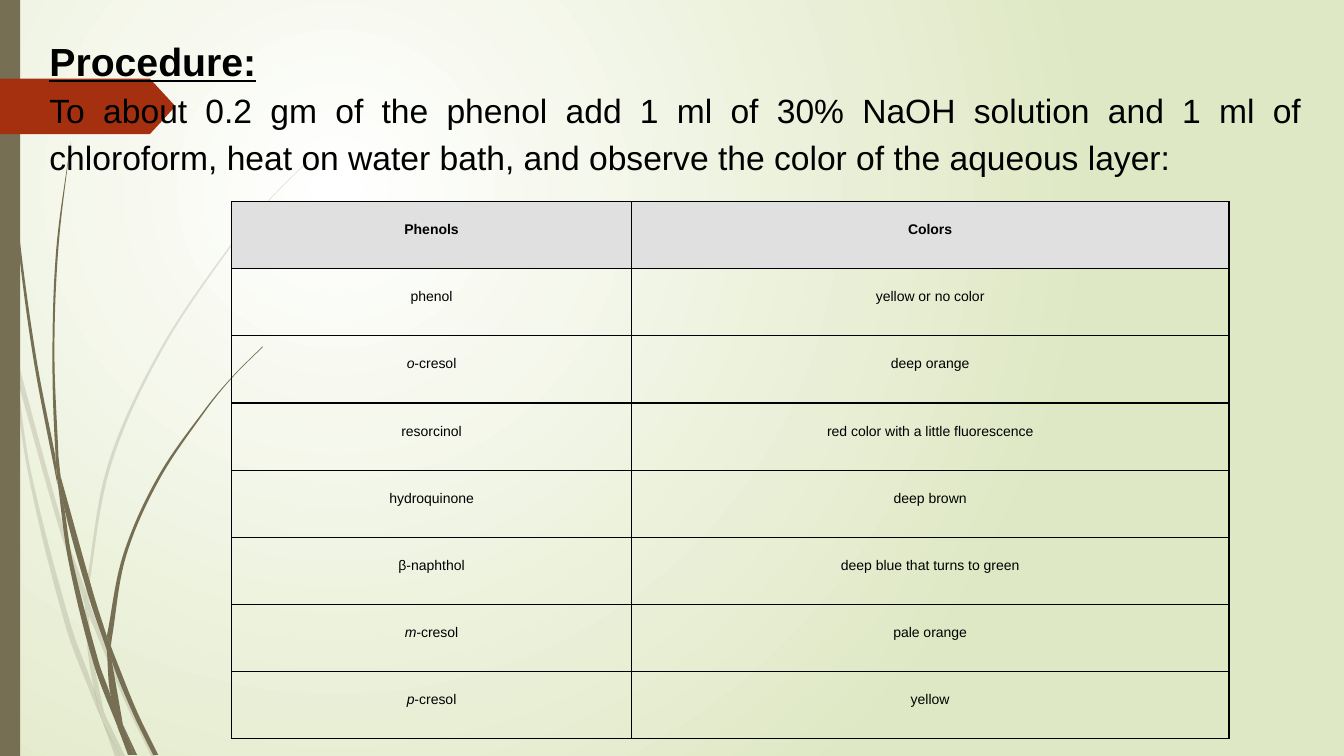
from dataclasses import dataclass
from math import hypot

from lxml.etree import SubElement
from pptx import Presentation
from pptx.dml.color import RGBColor
from pptx.enum.shapes import MSO_SHAPE
from pptx.enum.text import MSO_ANCHOR, MSO_AUTO_SIZE, PP_ALIGN
from pptx.oxml.ns import qn
from pptx.util import Inches, Pt


@dataclass(frozen=True)
class Theme:
    font: str = "Arial"
    ink: str = "000000"
    white: str = "FFFFFF"
    green: str = "DFE8C4"
    olive: str = "766F54"
    rust: str = "A53010"
    head: str = "E0E0E0"
    title: int = 28
    body: int = 24
    cell: int = 10
    line: float = 1.15


THEME = Theme()

# Each piece of grass has two curved edges, one down and one back up
PALE = [
    ([(0.11, 3.5), (0.09, 3.22), (0, 2.82)], [(0, 2.99), (0.1, 3.44)]),
    ([(0.17, 3.76), (0.58, 5.22), (0.84, 5.99)],
     [(0.85, 5.86), (0.62, 5.2), (0.14, 3.45)]),
    ([(0.88, 6.1), (1.23, 6.94), (1.5, 7.5)],
     [(1.55, 7.5), (1.27, 6.92), (0.92, 6.07), (0.88, 5.96)]),
    ([(1.05, 7.11), (1.19, 7.5)], [(1.24, 7.5)]),
    ([(0.11, 3.5), (0.28, 4.7), (0.65, 6.21), (0.92, 6.93), (1.01, 7.14)],
     [(0.99, 7.07), (0.93, 6.83), (0.7, 6.19), (0.31, 4.69), (0.17, 3.76)]),
    ([(0.84, 5.99), (0.87, 6.46), (0.93, 6.83), (0.96, 6.92), (1.05, 7.11)],
     [(1.03, 7.06), (0.91, 6.46), (0.88, 6.1)]),
    ([(3.12, 1.53), (2.68, 1.97), (2.28, 2.44), (1.58, 3.48), (1.07, 4.61),
      (0.85, 5.84)],
     [(0.88, 5.96), (0.88, 5.84), (1.1, 4.62), (1.6, 3.49), (2.29, 2.45),
      (2.68, 1.98), (3.12, 1.54)]),
    ([(1.01, 7.14), (1.14, 7.5)], [(1.19, 7.5)]),
    ([(0.85, 5.86), (0.84, 5.99), (0.88, 6.08)], [(0.88, 6.1), (0.88, 5.96)]),
    ([(0.93, 6.83), (1.01, 7.14), (1.19, 7.5)], [(1.05, 7.11), (0.96, 6.92)]),
]
DARK = [
    ([(0.03, 0), (0.07, 1.1), (0.17, 2.33), (0.33, 3.55), (0.57, 4.81)],
     [(0.55, 4.53), (0.36, 3.55), (0.19, 2.32), (0.08, 1.09), (0.04, 0)]),
    ([(0.6, 4.72), (0.64, 5.05), (0.88, 5.92), (1.06, 6.45)],
     [(1.06, 6.31), (0.93, 5.9), (0.6, 4.72)]),
    ([(1.1, 6.41), (1.11, 6.56), (1.32, 7.08), (1.52, 7.49)],
     [(1.57, 7.49), (1.36, 7.06), (1.13, 6.49)]),
    ([(0.57, 4.77), (0.68, 5.57), (0.93, 6.59), (1.17, 7.22)],
     [(1.16, 7.17), (1.1, 6.91), (0.98, 6.57), (0.72, 5.56), (0.64, 5.05)]),
    ([(0.7, 1.41), (0.56, 2.45), (0.52, 3.49), (0.55, 4.49), (0.6, 4.72)],
     [(0.58, 4.53), (0.54, 3.49), (0.58, 2.45), (0.7, 1.41)]),
    ([(1.22, 7.19), (1.33, 7.49)], [(1.36, 7.49)]),
    ([(0.55, 4.49), (0.57, 4.77), (0.64, 5.05)], [(0.6, 4.72)]),
    ([(2.6, 3.44), (2.31, 3.73), (2.04, 4.05), (1.56, 4.74), (1.22, 5.51),
      (1.06, 6.31)],
     [(1.1, 6.41), (1.11, 6.33), (1.25, 5.52), (1.58, 4.76), (2.05, 4.06),
      (2.31, 3.74), (2.61, 3.44)]),
    ([(1.17, 7.22), (1.27, 7.49)], [(1.31, 7.49)]),
    ([(1.06, 6.45), (1.1, 6.91), (1.22, 7.19)], [(1.11, 6.56), (1.09, 6.51)]),
    ([(1.06, 6.31), (1.06, 6.45), (1.11, 6.56)], [(1.1, 6.41)]),
    ([(1.1, 6.91), (1.17, 7.22), (1.3, 7.49)],
     [(1.33, 7.49), (1.22, 7.19), (1.16, 7.06)]),
]

# Each cell is a pair: italic prefix, plain text
ROWS = [
    (("", "Phenols"), ("", "Colors")),
    (("", "phenol"), ("", "yellow or no color")),
    (("o", "-cresol"), ("", "deep orange")),
    (("", "resorcinol"), ("", "red color with a little fluorescence")),
    (("", "hydroquinone"), ("", "deep brown")),
    (("", "β-naphthol"), ("", "deep blue that turns to green")),
    (("m-", "cresol"), ("", "pale orange")),
    (("p", "-cresol"), ("", "yellow")),
]


def paint(shape, color, alpha=100):
    shape.shadow.inherit = False
    shape.fill.solid()
    shape.fill.fore_color.rgb = RGBColor.from_string(color)
    shape.line.fill.background()
    if alpha < 100:
        tone = shape.element.spPr.find(".//" + qn("a:srgbClr"))
        SubElement(tone, qn("a:alpha"), val=str(alpha * 1000))


def style(run, size, bold=False, italic=False):
    font = run.font
    font.name, font.size = THEME.font, Pt(size)
    font.bold, font.italic = bold, italic
    font.color.rgb = RGBColor.from_string(THEME.ink)


def handles(edge):
    """Return the two Bezier control points of each step along an edge."""
    ends = [edge[0], *edge, edge[-1]]
    slopes = []
    for (x1, y1), (x2, y2) in zip(ends, ends[2:]):
        span = hypot(x2 - x1, y2 - y1) or 1
        slopes.append(((x2 - x1) / span, (y2 - y1) / span))
    pairs = []
    for (ax, ay), (bx, by), (ux, uy), (vx, vy) in zip(
            edge, edge[1:], slopes, slopes[1:]):
        reach = hypot(bx - ax, by - ay) / 3
        pairs.append(((ax + ux * reach, ay + uy * reach),
                      (bx - vx * reach, by - vy * reach)))
    return pairs


def add_blade(slide, down, back, alpha):
    points = [(Inches(x), Inches(y)) for x, y in down + back]
    pen = slide.shapes.build_freeform(*points[0])
    pen.add_line_segments(points[1:], close=True)
    shape = pen.convert_to_shape()
    # A straight step joins the two edges; the others become curves
    curves = [*handles(down), None, *handles(back)]
    for step, pair in zip(list(shape.element.iter(qn("a:lnTo"))), curves):
        if pair:
            step.tag = qn("a:cubicBezTo")
            for spot, (x, y) in enumerate(pair):
                knot = SubElement(step, qn("a:pt"),
                                  x=str(Inches(x) - shape.left),
                                  y=str(Inches(y) - shape.top))
                step.insert(spot, knot)
    paint(shape, THEME.olive, alpha)


def add_ground(slide):
    fill = slide.background.fill
    fill.gradient()
    stops = zip(fill.gradient_stops, (THEME.white, THEME.green), (0, 1))
    for stop, color, place in stops:
        stop.color.rgb = RGBColor.from_string(color)
        stop.position = place
    grad = slide.element.find(".//" + qn("a:gradFill"))
    grad.remove(grad.find(qn("a:lin")))
    ring = SubElement(grad, qn("a:path"), path="circle")
    SubElement(ring, qn("a:fillToRect"), l="50000", t="50000",
               r="100000", b="100000")


def add_decor(slide, height):
    for group, alpha in ((PALE, 20), (DARK, 100)):
        for down, back in group:
            add_blade(slide, down, back, alpha)
    bar = slide.shapes.add_shape(MSO_SHAPE.RECTANGLE, 0, 0, Inches(0.2), height)
    paint(bar, THEME.olive)
    arrow = slide.shapes.add_shape(MSO_SHAPE.PENTAGON, 0, Inches(0.78),
                                   Inches(1.74), Inches(0.55))
    arrow.adjustments[0] = 0.46
    paint(arrow, THEME.rust)


def add_intro(slide, *box):
    holder = slide.shapes.title
    slide.shapes.element.append(holder.element)  # bring to front
    holder.left, holder.top, holder.width, holder.height = map(Inches, box)
    frame = holder.text_frame
    frame.text = ("Procedure:\nTo about 0.2 gm of the phenol add 1 ml of 30% "
                  "NaOH solution and 1 ml of chloroform, heat on water bath, "
                  "and observe the color of the aqueous layer:")
    frame.word_wrap = True
    frame.auto_size = MSO_AUTO_SIZE.NONE
    frame.vertical_anchor = MSO_ANCHOR.TOP
    looks = ((THEME.title, True), (THEME.body, False))
    for para, (size, bold) in zip(frame.paragraphs, looks):
        para.alignment = PP_ALIGN.JUSTIFY
        para.line_spacing = THEME.line
        para.space_before = Pt(0)
        style(para.runs[0], size, bold)
        para.runs[0].font.underline = bold


def fill_cell(cell, parts, head):
    props = cell._tc.get_or_add_tcPr()
    for side in ("a:lnL", "a:lnR", "a:lnT", "a:lnB"):
        line = SubElement(props, qn(side), w=str(Pt(1)))
        SubElement(SubElement(line, qn("a:solidFill")), qn("a:srgbClr"),
                   val=THEME.ink)
    if head:
        cell.fill.solid()
        cell.fill.fore_color.rgb = RGBColor.from_string(THEME.head)
    else:
        cell.fill.background()
    cell.margin_left = cell.margin_right = Inches(0.06)
    cell.margin_top, cell.margin_bottom = Inches(0.18), 0
    para = cell.text_frame.paragraphs[0]
    para.alignment = PP_ALIGN.CENTER
    para.line_spacing = THEME.line
    for text, italic in zip(parts, (True, False)):
        if text:
            run = para.add_run()
            run.text = text
            style(run, THEME.cell, head, italic)


def add_colors(slide, left, top, widths, height):
    table = slide.shapes.add_table(
        len(ROWS), len(widths), Inches(left), Inches(top),
        Inches(sum(widths)), Inches(height)).table
    table.first_row = table.horz_banding = False
    for column, width in zip(table.columns, widths):
        column.width = Inches(width)
    for r, row in enumerate(ROWS):
        for c, parts in enumerate(row):
            fill_cell(table.cell(r, c), parts, head=r == 0)


def main():
    deck = Presentation()
    deck.slide_width, deck.slide_height = Inches(13.33), Inches(7.5)
    slide = deck.slides.add_slide(deck.slide_layouts[5])
    add_ground(slide)
    add_decor(slide, deck.slide_height)
    add_intro(slide, 0.39, 0.25, 12.62, 1.54)
    add_colors(slide, 2.3, 2, (3.96, 5.93), 5.33)
    deck.save("out.pptx")


if __name__ == "__main__":
    main()
